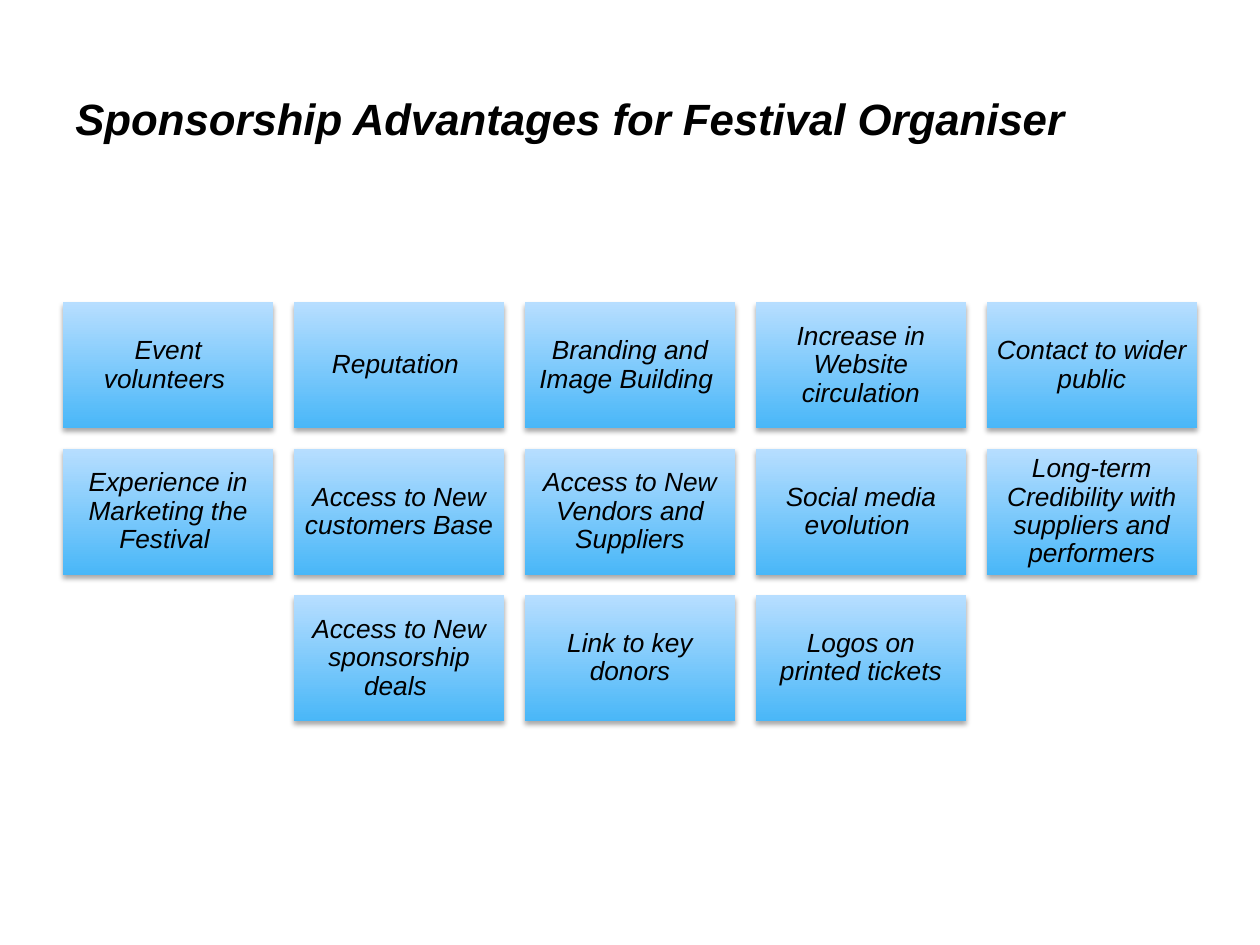
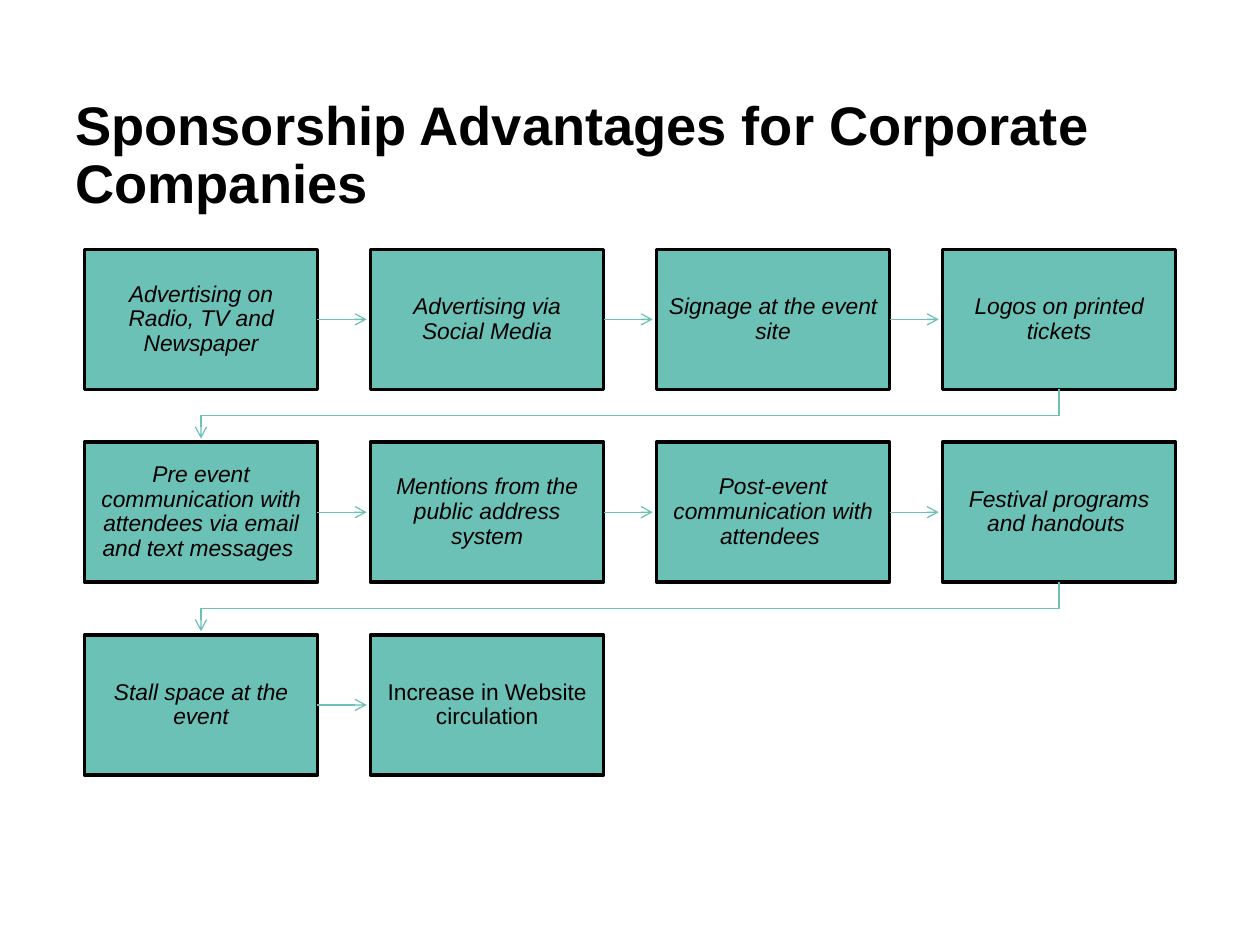
from lxml import etree
from pptx import Presentation
from pptx.dml.color import RGBColor
from pptx.enum import shapes, text
from pptx.oxml.ns import qn
from pptx.util import Inches, Pt

FONT = "Arial"
BLACK, TEAL = "000000", "6BC1B6"
BLUE_LOW, BLUE_HIGH = "49B7F8", "B7DEFF"

ORGANISER_TITLE = "Sponsorship Advantages for Festival Organiser"
ORGANISER_ROWS = [
    ["Event volunteers ", "Reputation ", "Branding and Image Building ",
     "Increase in Website circulation", "Contact to wider public"],
    ["Experience in Marketing the Festival ", "Access to New customers Base",
     "Access to New Vendors and Suppliers", "Social media evolution ",
     "Long-term Credibility with suppliers and performers"],
    ["Access to New sponsorship deals ", "Link to key donors",
     "Logos on printed tickets"],
]

COMPANY_TITLE = "Sponsorship Advantages for Corporate Companies"
COMPANY_STEPS = [
    "Advertising on Radio, TV and Newspaper",
    "Advertising via Social Media",
    "Signage at the event site",
    "Logos on printed tickets",
    "Pre event communication with attendees via email and text messages ",
    "Mentions from the public address system",
    "Post-event communication with attendees ",
    "Festival programs and handouts ",
    "Stall space at the event",
    "Increase in Website circulation",
]
UPRIGHT_STEP = COMPANY_STEPS[-1]
STEPS_PER_ROW = 4
ARROW_GAP = Inches(0.03)
BEND_DROP = Inches(0.21)


def rgb(color):
    return RGBColor.from_string(color)


def write(tf, words, size, bold=False, italic=False):
    tf.word_wrap = True
    p = tf.paragraphs[0]
    p.line_spacing = 0.9
    r = p.add_run()
    r.text = words
    f = r.font
    f.name, f.size, f.bold, f.italic = FONT, Pt(size), bold, italic
    f.color.rgb = rgb(BLACK)
    return p


def add_title(slide, words, size, italic=False):
    box = slide.shapes.add_textbox(Inches(0.5), Inches(0.73), Inches(9), Inches(1.05))
    write(box.text_frame, words, size, bold=True, italic=italic)


def add_box(slide, x, y, w, h, words, size, inset, italic=True):
    sp = slide.shapes.add_shape(shapes.MSO_SHAPE.RECTANGLE,
                                Inches(x), Inches(y), Inches(w), Inches(h))
    sp.shadow.inherit = False
    tf = sp.text_frame
    tf.margin_left = tf.margin_right = tf.margin_top = tf.margin_bottom = Inches(inset)
    tf.vertical_anchor = text.MSO_ANCHOR.MIDDLE
    write(tf, words, size, italic=italic).alignment = text.PP_ALIGN.CENTER
    return sp


def style_card(sp):
    """Blue gradient, no outline, soft shadow below."""
    sp.line.fill.background()
    sp.fill.gradient()
    sp.fill.gradient_angle = 90
    for stop, color in zip(sp.fill.gradient_stops, (BLUE_LOW, BLUE_HIGH)):
        stop.color.rgb = rgb(color)
    effects = sp._element.spPr.find(qn("a:effectLst"))
    shadow = etree.SubElement(effects, qn("a:outerShdw"), blurRad=str(Pt(3.1)),
                              dist=str(Pt(1.8)), dir="5400000", rotWithShape="0")
    color = etree.SubElement(shadow, qn("a:srgbClr"), val=BLACK)
    etree.SubElement(color, qn("a:alpha"), val="35000")


def style_step(sp):
    sp.fill.solid()
    sp.fill.fore_color.rgb = rgb(TEAL)
    sp.line.color.rgb = rgb(BLACK)
    sp.line.width = Pt(2)


def style_arrow(line):
    line.line.color.rgb = rgb(TEAL)
    line.line.width = Pt(0.75)
    props = line._element.spPr
    etree.SubElement(props.find(qn("a:ln")), qn("a:tailEnd"), type="arrow")
    etree.SubElement(props, qn("a:effectLst"))


def add_straight_arrow(slide, start, end):
    y = start.top + start.height // 2
    line = slide.shapes.add_connector(shapes.MSO_CONNECTOR.STRAIGHT,
                                      start.left + start.width, y,
                                      end.left - ARROW_GAP, y)
    line.begin_connect(start, 3)
    style_arrow(line)


def add_return_arrow(slide, start, end):
    """Bent arrow from the end of one row to the start of the next."""
    x1, y1 = start.left + start.width // 2, start.top + start.height
    x2, y2 = end.left + end.width // 2, end.top - ARROW_GAP
    bend = y1 + BEND_DROP
    builder = slide.shapes.build_freeform(x1, y1)
    builder.add_line_segments([(x1, bend), (x2, bend), (x2, y2)], close=False)
    line = builder.convert_to_shape()
    line.fill.background()
    style_arrow(line)


def build_organiser_slide(slide):
    add_title(slide, ORGANISER_TITLE, 25, italic=True)
    w, h = 1.67, 1
    gap = (9 - 5 * w) / 4
    for i, row in enumerate(ORGANISER_ROWS):
        left = (10 - len(row) * w - (len(row) - 1) * gap) / 2
        for j, words in enumerate(row):
            style_card(add_box(slide, left + j * (w + gap), 2.4 + i * (h + gap),
                               w, h, words, 15, 0.06))


def build_company_slide(slide):
    add_title(slide, COMPANY_TITLE, 31)
    boxes = []
    for i, words in enumerate(COMPANY_STEPS):
        row, col = divmod(i, STEPS_PER_ROW)
        sp = add_box(slide, 0.67 + col * 2.27, 1.98 + row * 1.53, 1.85, 1.11,
                     words, 13, 0.09, italic=words != UPRIGHT_STEP)
        style_step(sp)
        boxes.append(sp)
    for start, end in zip(boxes, boxes[1:]):
        same_row = start.top == end.top
        (add_straight_arrow if same_row else add_return_arrow)(slide, start, end)


def main():
    prs = Presentation()
    prs.slide_width, prs.slide_height = Inches(10), Inches(7.5)
    for build in (build_organiser_slide, build_company_slide):
        build(prs.slides.add_slide(prs.slide_layouts[6]))
    prs.save("out.pptx")


if __name__ == "__main__":
    main()
